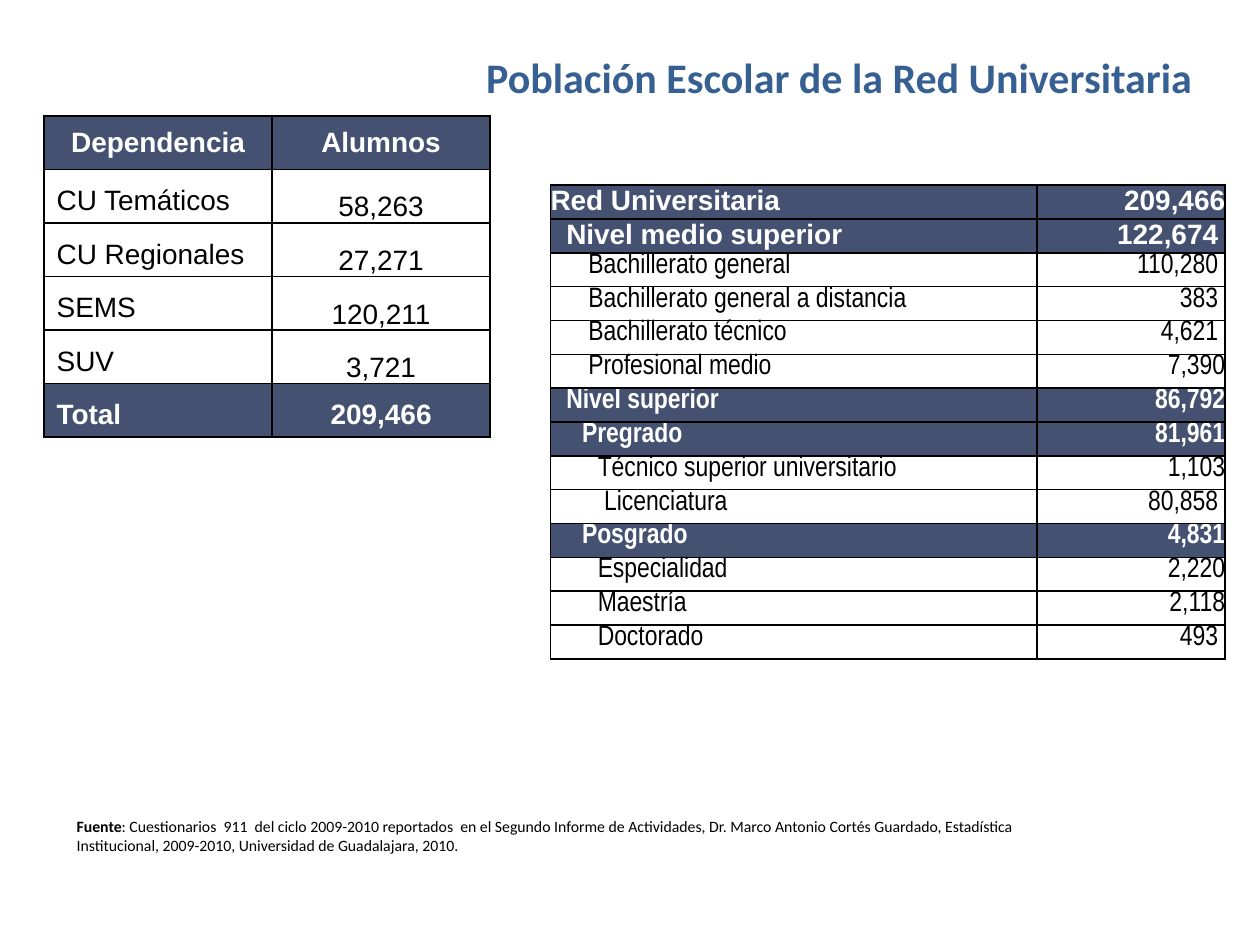
from lxml.etree import SubElement
from pptx import Presentation
from pptx.dml.color import RGBColor
from pptx.enum.text import MSO_ANCHOR as Anchor, MSO_AUTO_SIZE as AutoSize, PP_ALIGN as Align
from pptx.oxml.ns import qn
from pptx.util import Pt

NAVY, WHITE, BLACK, BLUE = "445171", "FFFFFF", "000000", "376092"
PADDED = (7.2, 3.6, 7.2, 3.6)
FLUSH = (0, 0, 0, 0)


def color(value):
    return RGBColor.from_string(value)


class SlideBuilder:
    def __init__(self, slide):
        self.slide = slide

    def style(self, span, size, font, tint, bold=False):
        span.font.size, span.font.name, span.font.bold = Pt(size), font, bold
        span.font.color.rgb = color(tint)

    def text(self, bounds, pieces, size, tint, align=Align.LEFT):
        """Add a Calibri paragraph made of (wording, bold) pieces."""
        box = self.slide.shapes.add_textbox(*map(Pt, bounds))
        frame = box.text_frame
        frame.word_wrap, frame.auto_size = True, AutoSize.SHAPE_TO_FIT_TEXT
        para = frame.paragraphs[0]
        para.alignment = align
        for wording, bold in pieces:
            span = para.add_run()
            span.text = wording
            self.style(span, size, "Calibri", tint, bold)

    def table(self, left, top, widths, row_height, row_count):
        frame = self.slide.shapes.add_table(
            row_count, len(widths), Pt(left), Pt(top),
            Pt(sum(widths)), Pt(row_height * row_count))
        table = frame.table
        table.first_row = table.horz_banding = False
        for column, width in zip(table.columns, widths):
            column.width = Pt(width)
        for row in table.rows:
            row.height = Pt(row_height)
        return table

    def cell(self, cell, wording, strong, font="Arial", align=Align.LEFT,
             anchor=Anchor.TOP, margins=FLUSH, plain_fill=None):
        """Fill one cell; a strong one is bold white on navy."""
        cell.text_frame.text = wording
        para = cell.text_frame.paragraphs[0]
        para.alignment = align
        self.style(para.runs[0], 16, font, WHITE if strong else BLACK, strong)
        cell.vertical_anchor = anchor
        (cell.margin_left, cell.margin_top,
         cell.margin_right, cell.margin_bottom) = map(Pt, margins)
        self.borders(cell)
        fill = NAVY if strong else plain_fill
        if fill:
            cell.fill.solid()
            cell.fill.fore_color.rgb = color(fill)
        else:
            cell.fill.background()

    def borders(self, cell):
        properties = cell._tc.get_or_add_tcPr()
        for side in ("lnL", "lnR", "lnT", "lnB"):
            line = SubElement(properties, qn(f"a:{side}"), w=str(Pt(1)))
            solid = SubElement(line, qn("a:solidFill"))
            SubElement(solid, qn("a:srgbClr"), val=BLACK)


DEPENDENCIES = [
    ("Dependencia", "Alumnos"),
    ("CU Temáticos", "58,263"),
    ("CU Regionales", "27,271"),
    ("SEMS", "120,211"),
    ("SUV", "3,721"),
    ("Total", "209,466"),
]

# label, students, left indent, right indent, strong
LEVELS = [
    ("Red Universitaria", "209,466", 0, 0, True),
    ("Nivel medio superior", "122,674", 9, 4, True),
    ("Bachillerato general", "110,280", 21.6, 4, False),
    ("Bachillerato general a distancia", "383", 21.6, 4, False),
    ("Bachillerato técnico", "4,621", 21.6, 4, False),
    ("Profesional medio", "7,390", 21.6, 0, False),
    ("Nivel superior", "86,792", 9, 0, True),
    ("Pregrado", "81,961", 18, 0, True),
    ("Técnico superior universitario", "1,103", 27, 0, False),
    ("Licenciatura", "80,858", 30.6, 4, False),
    ("Posgrado", "4,831", 18, 0, True),
    ("Especialidad", "2,220", 27, 0, False),
    ("Maestría", "2,118", 27, 0, False),
    ("Doctorado", "493", 27, 4, False),
]


def add_dependencies(builder):
    table = builder.table(25.2, 66.2, (130.3, 124.6), 30.6, len(DEPENDENCIES))
    last = len(DEPENDENCIES) - 1
    for index, (name, students) in enumerate(DEPENDENCIES):
        strong = index in (0, last)
        anchor = Anchor.BOTTOM if index else Anchor.MIDDLE
        builder.cell(table.cell(index, 0), name, strong, anchor=anchor, margins=PADDED,
                     align=Align.LEFT if index else Align.CENTER)
        builder.cell(table.cell(index, 1), students, strong, anchor=anchor,
                     margins=PADDED if strong else FLUSH, align=Align.CENTER)


def add_levels(builder):
    table = builder.table(314.6, 105.8, (277.9, 107.6), 19.34, len(LEVELS))
    for index, (name, students, left, right, strong) in enumerate(LEVELS):
        font = "Arial" if index < 2 else "Arial Narrow"
        builder.cell(table.cell(index, 0), name, strong, font,
                     margins=(left, 0, 0, 0), plain_fill=WHITE)
        builder.cell(table.cell(index, 1), students, strong, font,
                     align=Align.RIGHT, margins=(0, 0, right, 0))


def main():
    deck = Presentation()
    deck.slide_width, deck.slide_height = Pt(720), Pt(540)
    builder = SlideBuilder(deck.slides.add_slide(deck.slide_layouts[6]))
    builder.text((70.6, 25.9, 617.8, 36.7),
                 [("Población Escolar de la Red Universitaria", True)],
                 24, BLUE, Align.RIGHT)
    add_dependencies(builder)
    builder.text((36.7, 463, 585.4, 28.8), [
        ("Fuente", True),
        (": Cuestionarios  911  del ciclo 2009-2010 reportados  en el Segundo Informe de "
         "Actividades, Dr. Marco Antonio Cortés Guardado, Estadística Institucional, "
         "2009-2010, Universidad de Guadalajara, 2010.", False),
    ], 9, BLACK)
    add_levels(builder)
    deck.save("out.pptx")


if __name__ == "__main__":
    main()
